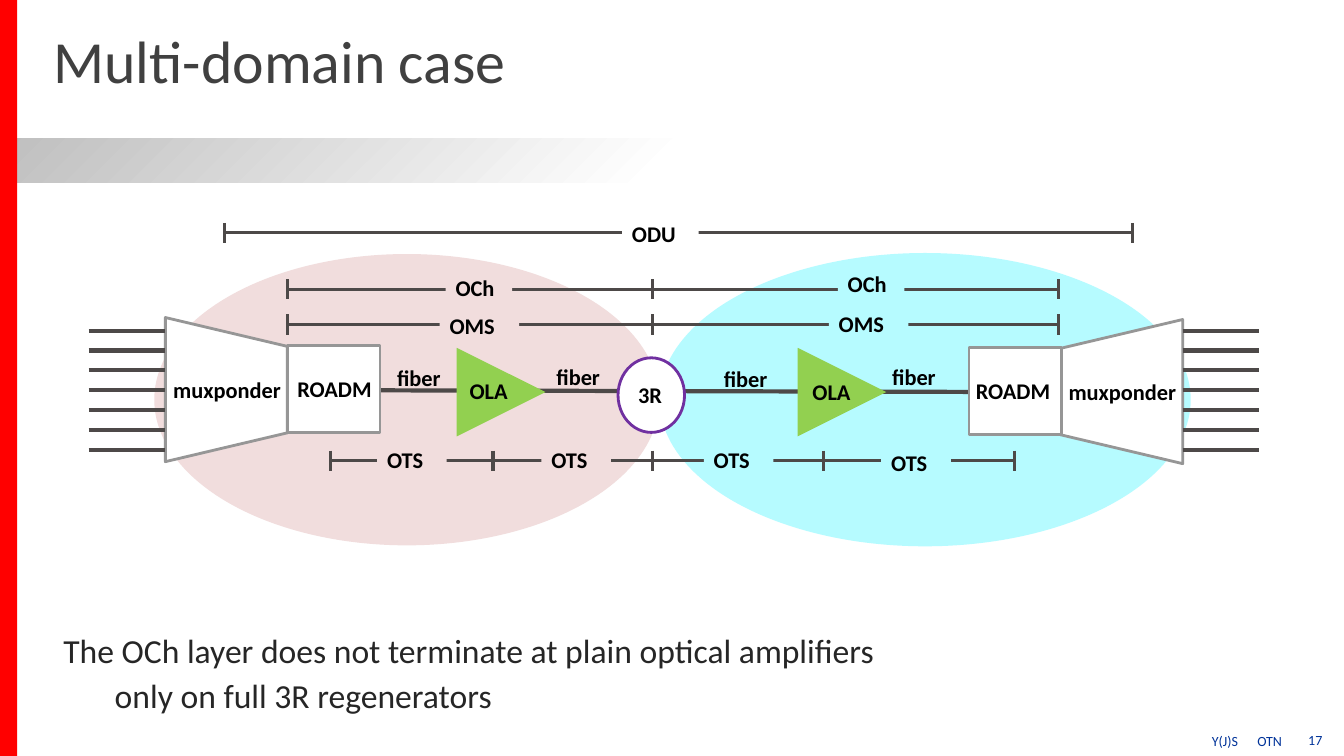
from lxml import etree
from pptx import Presentation
from pptx.dml.color import RGBColor
from pptx.enum.shapes import MSO_CONNECTOR as Link, MSO_SHAPE as Kind
from pptx.enum.text import MSO_ANCHOR as Anchor, PP_ALIGN as Align
from pptx.oxml.ns import qn
from pptx.util import Inches, Pt

WHITE = RGBColor(0xFF, 0xFF, 0xFF)
BLACK = RGBColor(0, 0, 0)
RED = RGBColor(0xFF, 0, 0)
SILVER = RGBColor(0xBF, 0xBF, 0xBF)
GRAY = RGBColor(0x96, 0x96, 0x96)
INK = RGBColor(0x4D, 0x49, 0x48)
TITLE = RGBColor(0x40, 0x40, 0x40)
BODY = RGBColor(0x26, 0x26, 0x26)
NAVY = RGBColor(0, 0x33, 0x99)
PINK = RGBColor(0xF1, 0xDD, 0xDD)
CYAN = RGBColor(0xB6, 0xFB, 0xFF)
GREEN = RGBColor(0x92, 0xD0, 0x50)
PURPLE = RGBColor(0x70, 0x30, 0xA0)


class Board:
    font = "Calibri"

    def __init__(self, slide):
        self.shapes = slide.shapes

    def shape(self, kind, x, y, w, h, fill, edge=None, turn=0):
        item = self.shapes.add_shape(kind, Inches(x), Inches(y), Inches(w), Inches(h))
        item.shadow.inherit = False
        item.rotation = turn
        item.fill.solid()
        item.fill.fore_color.rgb = fill
        if edge is None:
            item.line.fill.background()
        else:
            item.line.color.rgb = edge
            item.line.width = Pt(2)
        return item

    def band(self, x, y, w, h):
        """Draw a bar that fades from silver to white at its middle."""
        fill = self.shape(Kind.RECTANGLE, x, y, w, h, WHITE).fill
        fill.gradient()
        fill.gradient_angle = 315
        for stop, color, place in zip(fill.gradient_stops, (SILVER, WHITE), (0, 0.5)):
            stop.color.rgb = color
            stop.position = place

    def line(self, x1, y1, x2, y2, width=3):
        link = self.shapes.add_connector(
            Link.STRAIGHT, Inches(x1), Inches(y1), Inches(x2), Inches(y2))
        link.line.color.rgb = INK
        link.line.width = Pt(width)
        etree.SubElement(link._element.spPr, qn("a:effectLst"))

    def span(self, y, ticks):
        """Draw a level line with a short upright at each tick."""
        for x in ticks:
            self.line(x, y - 0.1, x, y + 0.1, 2.25)
        self.line(ticks[0], y, ticks[-1], y, 2.25)

    def text(self, x, y, w, h, lines, size, color, pad=(0.1, 0.05), anchor=Anchor.TOP):
        box = self.shapes.add_textbox(Inches(x), Inches(y), Inches(w), Inches(h))
        frame = box.text_frame
        frame.word_wrap = True
        frame.vertical_anchor = anchor
        frame.margin_left = frame.margin_right = Inches(pad[0])
        frame.margin_top = frame.margin_bottom = Inches(pad[1])
        frame.text = "\n".join(lines)
        for para in frame.paragraphs:
            para.font.name = self.font
            para.font.size = Pt(size)
            para.font.color.rgb = color
        return box

    def label(self, x, y, w, word, fill=None):
        box = self.text(x, y, w, 0.37, [word], 16, BLACK, anchor=Anchor.MIDDLE)
        box.text_frame.margin_right = 0
        box.text_frame.paragraphs[0].font.bold = True
        if fill is not None:
            box.fill.solid()
            box.fill.fore_color.rgb = fill

    def footer(self):
        pad = (0.13, 0.07)
        page = self.text(12.77, 7.19, 0.55, 0.3, ["17"], 10, NAVY, pad)
        page.text_frame.paragraphs[0].alignment = Align.CENTER
        note = self.text(11.89, 7.2, 1.22, 0.3, ["Y(J)S\tOTN"], 10, NAVY, pad)
        props = note.text_frame.paragraphs[0]._p.get_or_add_pPr()
        tabs = etree.Element(qn("a:tabLst"))
        etree.SubElement(tabs, qn("a:tab"), pos=str(Inches(0.45)), algn="l")
        props.insert(0, tabs)


def main():
    deck = Presentation()
    deck.slide_width, deck.slide_height = Inches(13.33), Inches(7.5)
    board = Board(deck.slides.add_slide(deck.slide_layouts[6]))

    board.band(0, 1.37, 13.33, 0.44)
    board.shape(Kind.RECTANGLE, 0, 0, 0.17, 7.5, RED)
    board.footer()
    title = board.text(0.53, 0.22, 10.09, 0.86, ["Multi-domain case"],
                       42.7, TITLE, (0, 0), Anchor.MIDDLE)
    title.text_frame.paragraphs[0].line_spacing = 0.85

    # Domains and the fiber path
    board.shape(Kind.OVAL, 1.53, 2.52, 5.01, 2.89, PINK)
    board.shape(Kind.OVAL, 6.54, 2.51, 5.27, 2.91, CYAN)
    board.line(2.86, 3.87, 10.25, 3.89)
    for x, word_x, word_y in ((4.53, 4.56, 3.69), (7.91, 7.96, 3.7)):
        board.shape(Kind.ISOSCELES_TRIANGLE, x, 3.45, 0.88, 0.88, GREEN, turn=90)
        board.label(word_x, word_y, 0.65, "OLA")

    # End nodes: muxponder, ROADM, their labels and the client lines
    for mux, turn, node, mux_word, node_word, client, y in (
            (1.53, 270, 2.85, 1.62, 2.85, 0.88, 3.26),
            (10.41, 90, 9.61, 10.5, 9.58, 11.73, 3.28)):
        board.shape(Kind.FLOWCHART_MANUAL_OPERATION, mux, y, 1.43, 1.21,
                    WHITE, GRAY, turn)
        board.shape(Kind.RECTANGLE, node, y + 0.17, 0.92, 0.86, WHITE, GRAY)
        board.label(node_word, y + 0.41, 0.95, "ROADM")
        board.label(mux_word, y + 0.42, 1.37, "muxponder")
        for row in range(7):
            level = 3.28 + row * 0.197
            board.line(client, level, client + 0.76, level)

    # Layer spans
    board.span(2.31, (2.23, 11.23))
    board.span(2.87, (2.85, 6.47, 10.5))
    board.span(3.22, (2.85, 6.47, 10.5))
    board.span(4.57, (3.28, 4.89, 6.47, 8.17, 10.06))
    for x, y, w, word, fill in (
            (6.17, 2.13, 0.76, "ODU", WHITE),
            (4.42, 2.67, 0.66, "OCh", PINK),
            (8.31, 2.63, 0.66, "OCh", CYAN),
            (4.36, 3.04, 0.79, "OMS", PINK),
            (8.22, 3.03, 0.79, "OMS", CYAN),
            (3.74, 4.37, 0.69, "OTS", PINK),
            (5.37, 4.37, 0.69, "OTS", PINK),
            (6.98, 4.37, 0.69, "OTS", CYAN),
            (8.74, 4.4, 0.69, "OTS", CYAN)):
        board.label(x, y, w, word, fill)
    for x, y in ((3.84, 3.56), (5.42, 3.55), (7.08, 3.57), (8.75, 3.55)):
        board.label(x, y, 0.65, "fiber")

    board.shape(Kind.OVAL, 6.13, 3.55, 0.66, 0.74, WHITE, PURPLE)
    board.label(6.23, 3.73, 0.65, "3R")

    body = board.text(0.53, 6.2, 12.17, 1.03, [
        "The OCh layer does not terminate at plain optical amplifiers",
        "only on full 3R regenerators"], 24, BODY)
    last = body.text_frame.paragraphs[1]
    last.space_before = Pt(3)
    last._p.get_or_add_pPr().set("marL", str(Inches(0.51)))

    deck.save("out.pptx")


if __name__ == "__main__":
    main()
